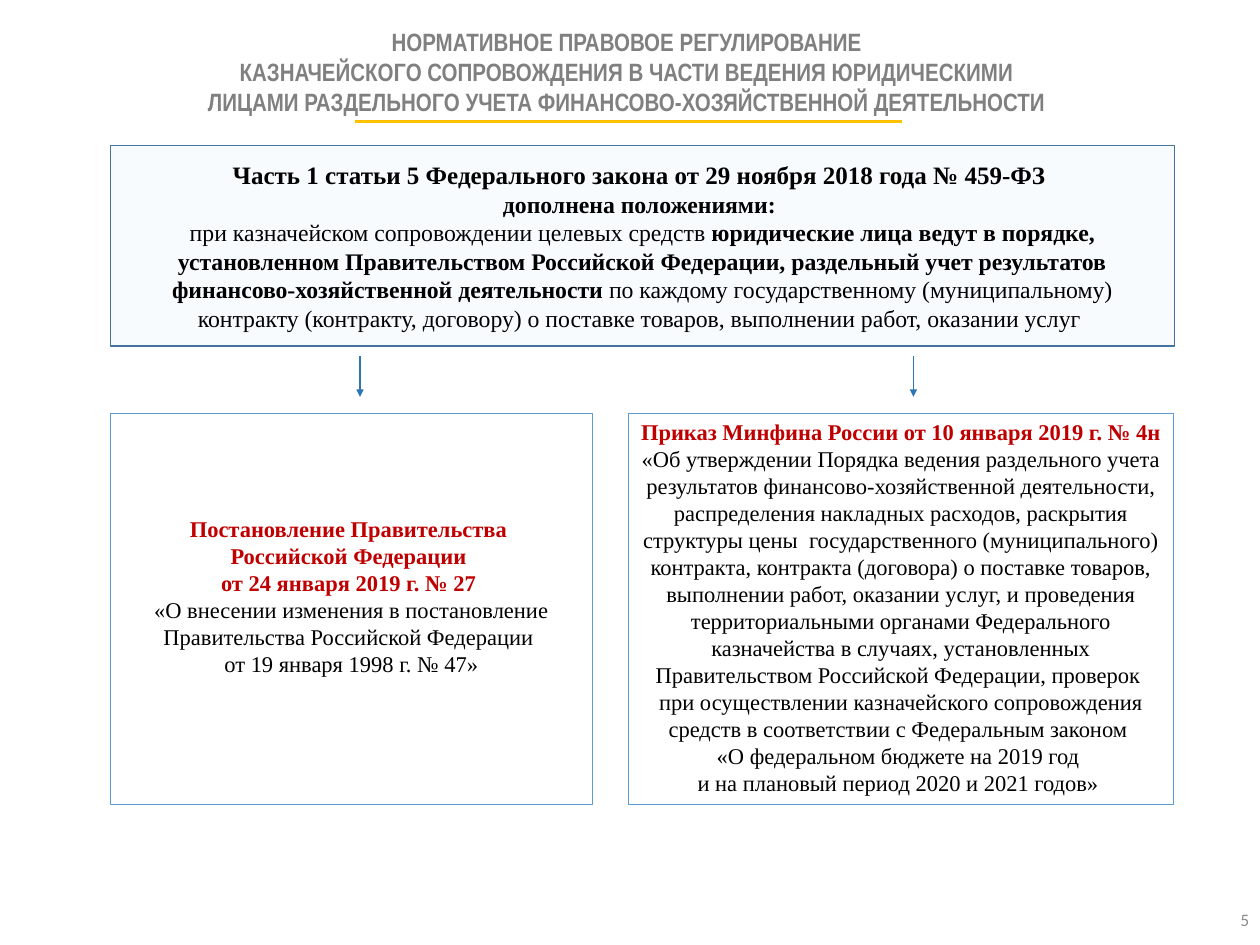
import pptx
import pptx.util
import pptx.dml.color
import pptx.enum.shapes
import pptx.enum.text
import pptx.oxml
import pptx.oxml.ns
from pptx.util import Cm

RGBColor = pptx.dml.color.RGBColor
ANCHOR = pptx.enum.text.MSO_ANCHOR
ALIGN = pptx.enum.text.PP_ALIGN
STRAIGHT = pptx.enum.shapes.MSO_CONNECTOR.STRAIGHT

GREY = RGBColor(0x80, 0x80, 0x80)
LIGHT_GREY = RGBColor(0x8C, 0x8C, 0x8C)
BLACK = RGBColor(0, 0, 0)
RED = RGBColor(0xC0, 0, 0)
PALE_BLUE = RGBColor(0xDE, 0xEB, 0xF7)
DARK_BLUE = RGBColor(0x43, 0x73, 0x9E)
BLUE = RGBColor(0x5B, 0x9B, 0xD5)
ARROW_BLUE = RGBColor(0x2E, 0x75, 0xB6)
YELLOW = RGBColor(0xFF, 0xC0, 0)


def write(tf, text, new=True, size=18, font="Times New Roman", color=BLACK,
          bold=False, align=ALIGN.CENTER):
    """Add text to a frame, in a new paragraph or at the end of the last one."""
    if new and tf.paragraphs[-1].runs:
        tf.add_paragraph()
    p = tf.paragraphs[-1]
    p.alignment = align
    for i, line in enumerate(text.split("\n")):
        if i:
            p.add_line_break()
        r = p.add_run()
        r.text = line
        r.font.size = pptx.util.Pt(size)
        r.font.name = font
        r.font.bold = bold
        r.font.color.rgb = color


def add_xml(parent, tag, **attributes):
    """Append an empty drawing element to its parent."""
    child = pptx.oxml.parse_xml(f"<a:{tag} {pptx.oxml.ns.nsdecls('a')}/>")
    for name, value in attributes.items():
        child.set(name, value)
    parent.append(child)


prs = pptx.Presentation()
prs.slide_width, prs.slide_height = Cm(35.56), Cm(26.67)
s = prs.slides.add_slide(prs.slide_layouts[5])

# Title
sp = s.shapes.title
sp.left, sp.top, sp.width, sp.height = Cm(1.37), Cm(0.61), Cm(32.79), Cm(2.82)
tf = sp.text_frame
tf.auto_size = pptx.enum.text.MSO_AUTO_SIZE.NONE
tf.vertical_anchor = ANCHOR.TOP
for text in (
    "НОРМАТИВНОЕ ПРАВОВОЕ РЕГУЛИРОВАНИЕ ",
    "КАЗНАЧЕЙСКОГО СОПРОВОЖДЕНИЯ В ЧАСТИ ВЕДЕНИЯ ЮРИДИЧЕСКИМИ \n"
    "ЛИЦАМИ РАЗДЕЛЬНОГО УЧЕТА ФИНАНСОВО-ХОЗЯЙСТВЕННОЙ ДЕЯТЕЛЬНОСТИ ",
):
    write(tf, text, size=20, font="Arial Narrow", color=GREY, bold=True)

# Framed boxes: the law above, the two acts below
frames = []
for x, y, w, h, color, weight in (
    (3.12, 4.11, 30.02, 5.66, DARK_BLUE, 1),
    (3.12, 11.68, 13.59, 11.02, BLUE, 0.75),
    (17.73, 11.68, 15.39, 11.02, BLUE, 0.75),
):
    sp = s.shapes.add_shape(pptx.enum.shapes.MSO_SHAPE.RECTANGLE,
                            Cm(x), Cm(y), Cm(w), Cm(h))
    sp.shadow.inherit = False
    sp.fill.background()
    sp.line.color.rgb = color
    sp.line.width = pptx.util.Pt(weight)
    tf = sp.text_frame
    tf.word_wrap = True
    tf.vertical_anchor = ANCHOR.MIDDLE
    frames.append(tf)
law, decree, order = frames

# Federal law, on a translucent fill
sp = s.shapes[1]
sp.fill.solid()
sp.fill.fore_color.rgb = PALE_BLUE
add_xml(sp.fill._xPr.find(".//" + pptx.oxml.ns.qn("a:srgbClr")), "alpha", val="20000")
write(law, "Часть 1 статьи 5 Федерального закона от 29 ноября 2018 года № 459-ФЗ ",
      size=20, bold=True)
write(law, "дополнена положениями: ", size=19, bold=True)
write(law, "при казначейском сопровождении целевых средств ", size=19)
write(law, "юридические лица ведут в порядке, установленном Правительством Российской "
      "Федерации, раздельный учет результатов финансово-хозяйственной деятельности",
      new=False, size=19, bold=True)
write(law, " по каждому государственному (муниципальному) контракту (контракту, договору) "
      "о поставке товаров, выполнении работ, оказании услуг ", new=False, size=19)

# Government decree, set a little above the middle
decree.margin_bottom = Cm(0.89)
write(decree, "Постановление Правительства ", color=RED, bold=True)
write(decree, "Российской Федерации \nот 24 января 2019 г. № 27 ", color=RED, bold=True)
write(decree, "«О внесении изменения в постановление Правительства Российской Федерации \n"
      "от 19 января 1998 г. № 47»")

# Ministry order
order.vertical_anchor = ANCHOR.TOP
write(order, "Приказ Минфина России от 10 января 2019 г. № 4н", color=RED, bold=True)
write(order, "«Об утверждении Порядка ведения раздельного учета результатов "
      "финансово-хозяйственной деятельности, распределения накладных расходов, раскрытия "
      "структуры цены  государственного (муниципального) контракта, контракта (договора) "
      "о поставке товаров, выполнении работ, оказании услуг, и проведения территориальными "
      "органами Федерального казначейства в случаях, установленных Правительством "
      "Российской Федерации, проверок \n"
      "при осуществлении казначейского сопровождения средств в соответствии "
      "с Федеральным законом \n"
      "«О федеральном бюджете на 2019 год \n"
      "и на плановый период 2020 и 2021 годов» ")

# Arrows to the acts and the rule under the title
for x1, y1, x2, y2, color, weight, arrow in (
    (10.16, 10.06, 10.16, 11.2, ARROW_BLUE, 1.25, True),
    (25.78, 10.06, 25.78, 11.2, ARROW_BLUE, 1.25, True),
    (10.01, 3.43, 25.45, 3.43, YELLOW, 2, False),
):
    c = s.shapes.add_connector(STRAIGHT, Cm(x1), Cm(y1), Cm(x2), Cm(y2))
    c.line.color.rgb = color
    c.line.width = pptx.util.Pt(weight)
    if arrow:
        add_xml(c.line._get_or_add_ln(), "tailEnd", type="triangle")
    add_xml(c._element.spPr, "effectLst")

# Slide number
tf = s.shapes.add_textbox(Cm(34.49), Cm(25.25), Cm(1.07), Cm(1.42)).text_frame
tf.word_wrap = True
tf.vertical_anchor = ANCHOR.MIDDLE
tf.margin_left = tf.margin_right = Cm(0.3)
write(tf, "5", size=14, font="Calibri", color=LIGHT_GREY, align=ALIGN.RIGHT)

prs.save("out.pptx")
